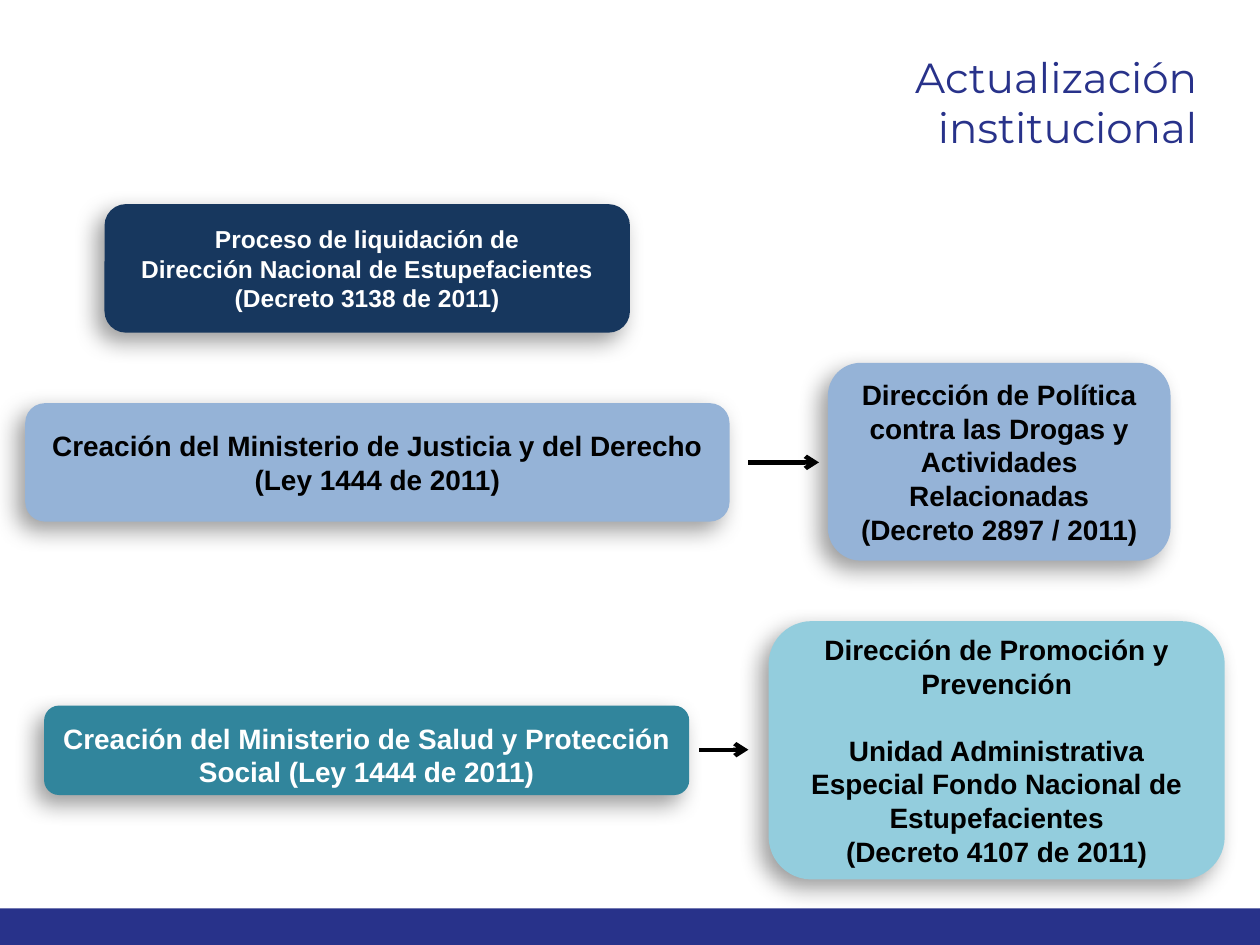
from lxml import etree
from pptx import Presentation
from pptx import util as u
from pptx.dml.color import RGBColor
from pptx.enum import shapes, text
from pptx.oxml import parse_xml
from pptx.oxml.ns import nsdecls, qn

BLACK = RGBColor(0x00, 0x00, 0x00)
WHITE = RGBColor(0xFF, 0xFF, 0xFF)
INDIGO = RGBColor(0x28, 0x32, 0x8A)
NAVY = RGBColor(0x17, 0x37, 0x5E)
BLUE = RGBColor(0x95, 0xB3, 0xD7)
TEAL = RGBColor(0x31, 0x85, 0x9C)
AQUA = RGBColor(0x93, 0xCD, 0xDD)

SHADOW = (
    f'<a:effectLst {nsdecls("a")}>'
    '<a:outerShdw blurRad="165100" dist="88900" dir="8100000" algn="tr" rotWithShape="0">'
    '<a:srgbClr val="000000"><a:alpha val="38000"/></a:srgbClr>'
    '</a:outerShdw></a:effectLst>'
)


def write(tf, lines, align, **fmt):
    tf.word_wrap = True
    for i, line in enumerate(lines):
        p = tf.paragraphs[0] if i == 0 else tf.add_paragraph()
        p.alignment = align
        r = p.add_run()
        r.text = line
        for name, value in fmt.items():
            if name == "color":
                r.font.color.rgb = value
            else:
                setattr(r.font, name, value)


def add_block(s, kind, box, fill):
    sp = s.shapes.add_shape(kind, *map(u.Inches, box))
    sp.shadow.inherit = False
    sp.fill.solid()
    sp.fill.fore_color.rgb = fill
    sp.line.fill.background()
    return sp


def add_card(s, box, fill, color, lines, size=16):
    sp = add_block(s, shapes.MSO_SHAPE.ROUNDED_RECTANGLE, box, fill)
    props = sp._element.spPr
    props.replace(props.find(qn("a:effectLst")), parse_xml(SHADOW))
    tf = sp.text_frame
    tf.vertical_anchor = text.MSO_ANCHOR.MIDDLE
    write(tf, lines, text.PP_ALIGN.CENTER,
          name="Arial", size=u.Pt(size), bold=True, color=color)
    return tf


def add_arrow(s, x1, x2, y):
    c = s.shapes.add_connector(shapes.MSO_CONNECTOR.STRAIGHT,
                               *map(u.Inches, (x1, y, x2, y)))
    c.line.color.rgb = BLACK
    c.line.width = u.Pt(2.5)
    etree.SubElement(c.line._get_or_add_ln(), qn("a:tailEnd"), type="arrow")
    etree.SubElement(c._element.spPr, qn("a:effectLst"))


def add_title(s, box, title):
    tf = s.shapes.add_textbox(*map(u.Inches, box)).text_frame
    write(tf, [title], text.PP_ALIGN.RIGHT,
          name="Montserrat", size=u.Pt(24), color=INDIGO)


def main():
    prs = Presentation()
    prs.slide_width, prs.slide_height = u.Inches(10), u.Inches(7.5)
    s = prs.slides.add_slide(prs.slide_layouts[6])

    add_block(s, shapes.MSO_SHAPE.RECTANGLE, (0, 7.21, 10, 0.29), INDIGO)
    add_card(s, (0.2, 3.2, 5.59, 0.94), BLUE, BLACK,
             ["Creación del Ministerio de Justicia y del Derecho",
              "(Ley 1444 de 2011)"])
    health = add_card(s, (0.35, 5.6, 5.12, 0.71), TEAL, WHITE,
                      ["Creación del Ministerio de Salud y Protección Social (Ley 1444 de 2011)"])
    health.margin_top = u.Inches(0.12)
    add_card(s, (6.57, 2.88, 2.72, 1.57), BLUE, BLACK,
             ["Dirección de Política contra las Drogas y Actividades Relacionadas",
              "(Decreto 2897 / 2011)"])
    add_card(s, (0.83, 1.62, 4.17, 1.02), NAVY, WHITE,
             ["Proceso de liquidación de",
              "Dirección Nacional de Estupefacientes",
              "(Decreto 3138 de 2011)"], size=14)
    prevention = add_card(s, (6.1, 4.93, 3.62, 2.05), AQUA, BLACK,
                          ["Dirección de Promoción y Prevención",
                           "Unidad Administrativa Especial Fondo Nacional de Estupefacientes",
                           "(Decreto 4107 de 2011)"])
    prevention.paragraphs[1].space_before = u.Pt(19)

    add_arrow(s, 5.94, 6.5, 3.67)
    add_arrow(s, 5.55, 5.94, 5.95)
    add_title(s, (6.02, 0.36, 3.58, 0.91), "Actualización institucional")
    prs.save("out.pptx")


if __name__ == "__main__":
    main()
